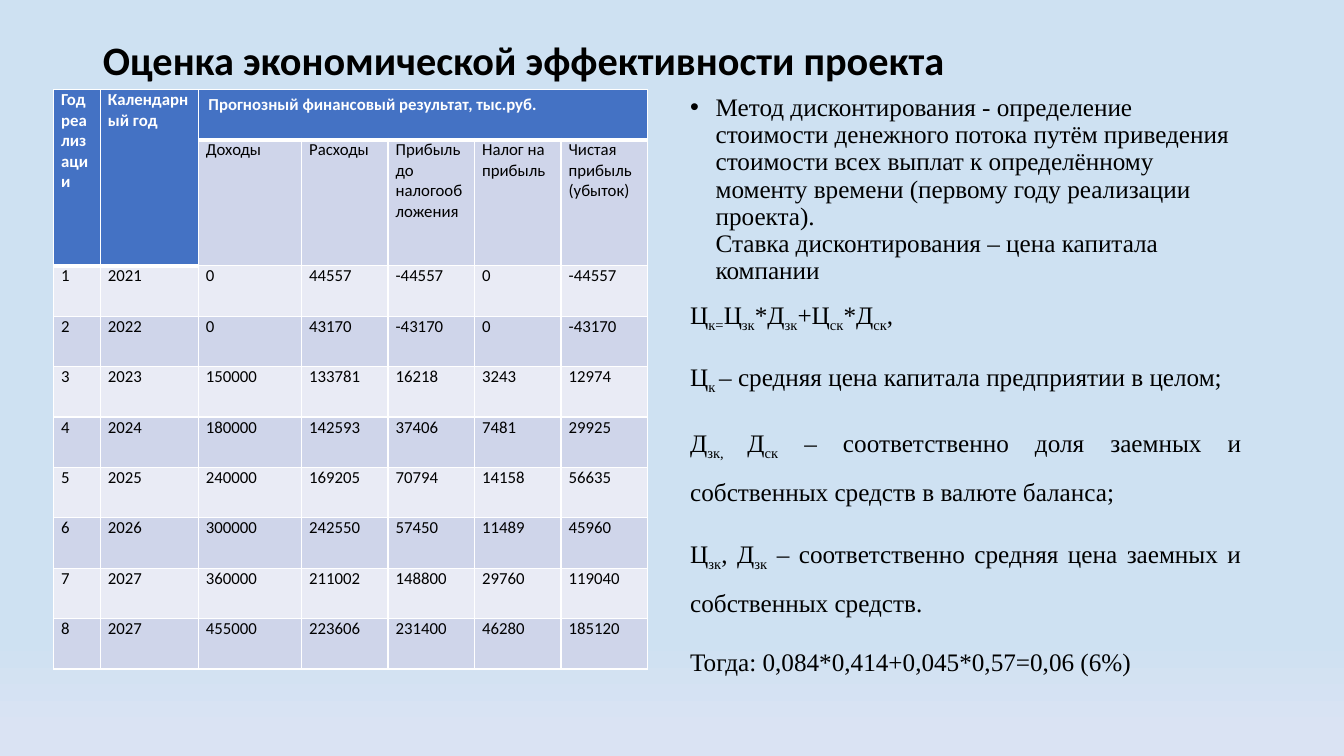
from lxml import etree
from pptx import Presentation
from pptx.dml.color import RGBColor
from pptx.enum.text import MSO_ANCHOR, MSO_AUTO_SIZE, PP_ALIGN
from pptx.oxml.ns import qn
from pptx.util import Cm, Pt

LEFT, JUSTIFY = PP_ALIGN.LEFT, PP_ALIGN.JUSTIFY
TOP, MIDDLE = MSO_ANCHOR.TOP, MSO_ANCHOR.MIDDLE
NO_FIT = MSO_AUTO_SIZE.NONE

COLORS = {
    "sky": "CEE1F2",
    "haze": "DAE3F3",
    "header": "4472C4",
    "dark_band": "CFD5EA",
    "light_band": "E9EBF5",
    "white": "FFFFFF",
    "black": "000000",
}

COLUMN_WIDTHS = [1.18, 2.47, 2.6, 2.18, 2.18, 2.18, 2.18]
ROW_HEIGHTS = [1.26, 3.18] + [1.27] * 8
HEADINGS = ["Год реализации", "Календарный год",
            "Прогнозный финансовый результат, тыс.руб."]
SUBHEADINGS = ["Доходы", "Расходы", "Прибыль до налогообложения",
               "Налог на\nприбыль", "Чистая прибыль\n(убыток)"]
RESULTS = [
    (1, 2021, 0, 44557, -44557, 0, -44557),
    (2, 2022, 0, 43170, -43170, 0, -43170),
    (3, 2023, 150000, 133781, 16218, 3243, 12974),
    (4, 2024, 180000, 142593, 37406, 7481, 29925),
    (5, 2025, 240000, 169205, 70794, 14158, 56635),
    (6, 2026, 300000, 242550, 57450, 11489, 45960),
    (7, 2027, 360000, 211002, 148800, 29760, 119040),
    (8, 2027, 455000, 223606, 231400, 46280, 185120),
]

METHOD = ("Метод дисконтирования - определение стоимости денежного потока "
          "путём приведения стоимости всех выплат к определённому моменту "
          "времени (первому году реализации проекта). \v"
          "Ставка дисконтирования – цена капитала компании")
# Text, alignment, line spacing; underscores enclose subscripts
NOTES = [
    (METHOD, LEFT, 0.9),
    ("Ц_к=_Ц_зк_*Д_зк_+Ц_ск_*Д_ск_,", LEFT, 0.9),
    ("Ц_к _– средняя цена капитала предприятии в целом;", JUSTIFY, 1.5),
    ("Д_зк, _Д_ск_ – соответственно доля заемных и собственных средств "
     "в валюте баланса;", JUSTIFY, 1.5),
    ("Ц_зк_, Д_зк_ – соответственно средняя цена заемных и собственных "
     "средств.", JUSTIFY, 1.5),
    ("Тогда: 0,084*0,414+0,045*0,57=0,06 (6%)", JUSTIFY, 1.5),
]


def rgb(name):
    return RGBColor.from_string(COLORS[name])


def set_font(para, name, size, color, bold=False):
    font = para.font
    font.name, font.size, font.bold = name, Pt(size), bold
    font.color.rgb = rgb(color)


def place(box, left, top, width, height, anchor):
    box.left, box.top = Cm(left), Cm(top)
    box.width, box.height = Cm(width), Cm(height)
    frame = box.text_frame
    frame.word_wrap = True
    frame.auto_size = NO_FIT
    frame.vertical_anchor = anchor
    return frame


def paint_background(page):
    fill = page.background.fill
    fill.gradient()
    fill.gradient_angle = 270
    stops = zip(fill.gradient_stops, [(0.84, "sky"), (0.97, "haze")])
    for stop, (position, color) in stops:
        stop.position = position
        stop.color.rgb = rgb(color)


def set_bullet(para, char=None):
    properties = para._p.get_or_add_pPr()
    indent = Cm(0.64) if char else 0
    properties.set("marL", str(indent))
    properties.set("indent", str(-indent))
    if char:
        font = etree.SubElement(properties, qn("a:buFont"))
        font.set("typeface", "Arial")
        etree.SubElement(properties, qn("a:buChar")).set("char", char)
    else:
        etree.SubElement(properties, qn("a:buNone"))


def add_subscripted(para, text):
    for index, part in enumerate(text.split("_")):
        if part:
            span = para.add_run()
            span.text = part
            if index % 2:
                span.font._element.set("baseline", "-25000")


def fill_title(box):
    frame = place(box, 2.34, 1.02, 29.2, 1.12, MIDDLE)
    para = frame.paragraphs[0]
    para.text = "Оценка экономической эффективности проекта"
    para.alignment, para.line_spacing = LEFT, 0.9
    set_font(para, "Calibri", 28.8, "black", bold=True)


def fill_notes(box):
    frame = place(box, 17.14, 2.26, 14.4, 15.44, TOP)
    for index, (text, alignment, spacing) in enumerate(NOTES):
        para = frame.add_paragraph() if index else frame.paragraphs[0]
        para.alignment, para.line_spacing = alignment, spacing
        para.space_before = Pt(10)
        set_bullet(para, None if index else "•")
        set_font(para, "Times New Roman", 18, "black")
        if index:
            add_subscripted(para, text)
        else:
            para.text = text


def set_borders(cell, bottom):
    properties = cell._tc.get_or_add_tcPr()
    widths = [("L", 1), ("R", 1), ("T", 1), ("B", bottom)]
    for position, (side, width) in enumerate(widths):
        line = etree.Element(qn(f"a:ln{side}"), w=str(Pt(width)))
        solid = etree.SubElement(line, qn("a:solidFill"))
        etree.SubElement(solid, qn("a:srgbClr"), val=COLORS["white"])
        properties.insert(position, line)


def fill_cell(cell, text, band, color="black", bold=False, alignment=JUSTIFY):
    cell.fill.solid()
    cell.fill.fore_color.rgb = rgb(band)
    set_borders(cell, 3 if band == "header" else 1)
    if alignment == JUSTIFY:
        cell.margin_left = cell.margin_right = Cm(0.19)
        cell.margin_top = cell.margin_bottom = 0
    cell.text = text
    for para in cell.text_frame.paragraphs:
        para.alignment = alignment
        set_font(para, "Calibri", 12, color, bold)


def add_results_table(page):
    rows, columns = len(ROW_HEIGHTS), len(COLUMN_WIDTHS)
    table = page.shapes.add_table(
        rows, columns, Cm(1.35), Cm(2.26),
        Cm(sum(COLUMN_WIDTHS)), Cm(sum(ROW_HEIGHTS))).table
    for column, width in zip(table.columns, COLUMN_WIDTHS):
        column.width = Cm(width)
    for row, height in zip(table.rows, ROW_HEIGHTS):
        row.height = Cm(height)

    # Merged headings
    for column, heading in enumerate(HEADINGS):
        last = (0, columns - 1) if column == 2 else (1, column)
        table.cell(0, column).merge(table.cell(*last))
        fill_cell(table.cell(0, column), heading, "header", "white", True,
                  LEFT if column == 2 else JUSTIFY)
    for column, heading in enumerate(SUBHEADINGS, 2):
        fill_cell(table.cell(1, column), heading, "dark_band")

    # Yearly figures
    for row, figures in enumerate(RESULTS, 2):
        band = "dark_band" if row % 2 else "light_band"
        for column, figure in enumerate(figures):
            fill_cell(table.cell(row, column), str(figure), band)


def main():
    deck = Presentation()
    deck.slide_width, deck.slide_height = Cm(33.87), Cm(19.05)
    page = deck.slides.add_slide(deck.slide_layouts[1])
    paint_background(page)
    fill_title(page.shapes.title)
    fill_notes(page.placeholders[1])
    add_results_table(page)
    deck.save("out.pptx")


if __name__ == "__main__":
    main()
